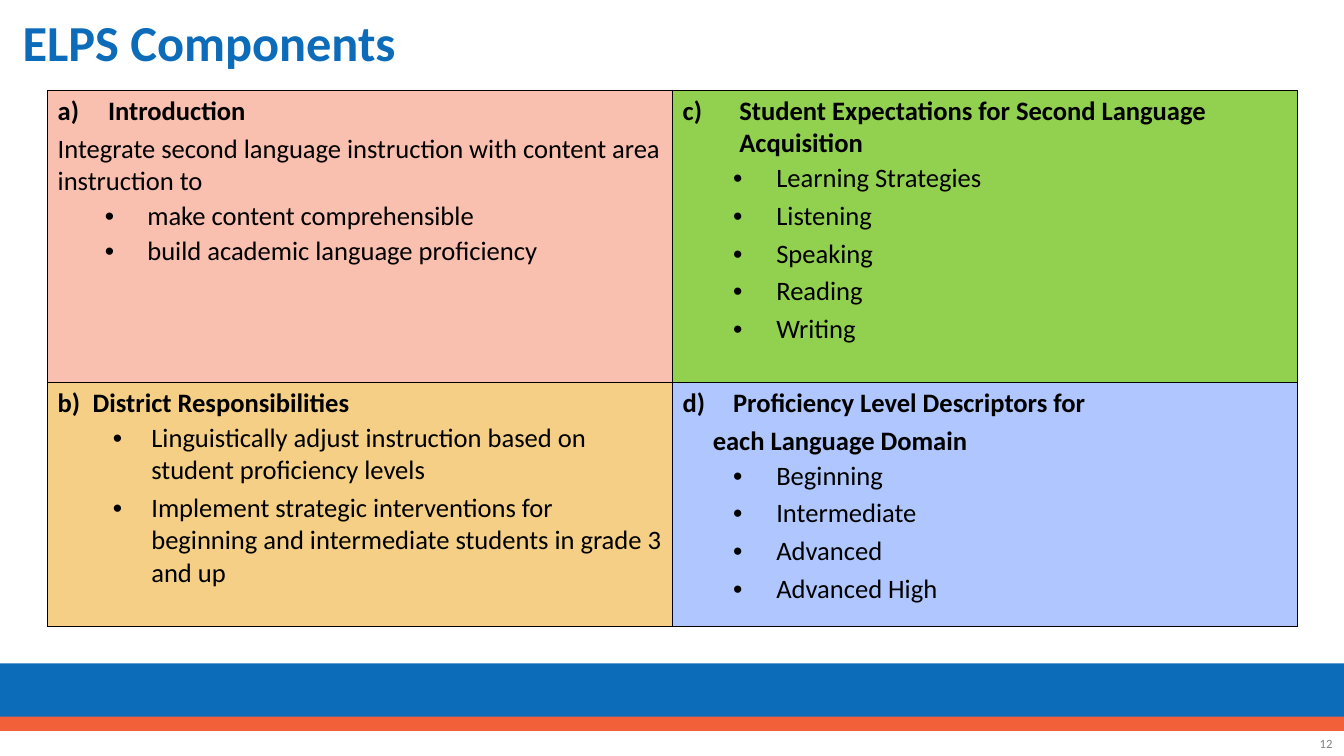
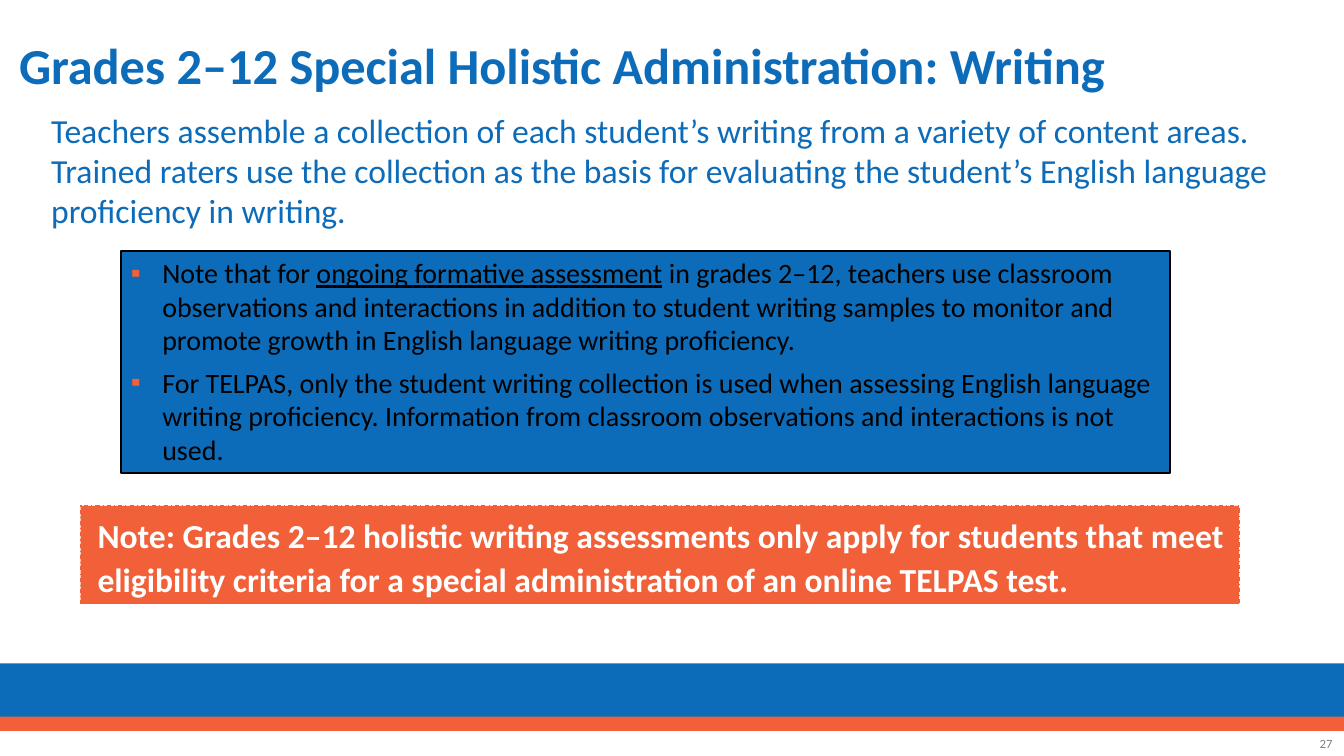
from lxml import etree
from pptx import Presentation
from pptx.dml.color import RGBColor
from pptx.enum.dml import MSO_LINE
from pptx.enum.shapes import MSO_SHAPE
from pptx.enum.text import MSO_ANCHOR, PP_ALIGN
from pptx.oxml.ns import qn
from pptx.util import Cm, Pt

RECT = MSO_SHAPE.RECTANGLE
DASH = MSO_LINE.DASH_DOT
TOP, MIDDLE = MSO_ANCHOR.TOP, MSO_ANCHOR.MIDDLE
LEFT, RIGHT = PP_ALIGN.LEFT, PP_ALIGN.RIGHT

FONT = "Calibri"
COLORS = {
    "blue": "0D6CB9", "orange": "F16038", "black": "000000",
    "white": "FFFFFF", "gray": "808080", "pink": "F9BFAF",
    "green": "92D050", "gold": "F4CF85", "sky": "AFC7FE",
}
WIDE, HIGH = 33.87, 19.05
BANDS = [("blue", 16.72, 1.46), ("orange", 18.06, 0.36)]
NUMBER = (32.5, 18.4, 1.33, 0.65)

GRID = {"left": 1.2, "top": 2.28, "cols": [15.75, 15.75], "rows": [7.36, 6.15]}
CELLS = [
    [
        ("pink", [
            ("Introduction", {"bold": True, "margin": 1.27, "hang": 1.27, "start": 1}),
            ("Integrate second language instruction with content area instruction to",
             {"before": 3.8}),
            ("make content comprehensible",
             {"margin": 2.26, "hang": 1.07, "bullet": "•", "before": 1.9}),
            ("build academic language proficiency",
             {"margin": 2.26, "hang": 1.07, "bullet": "•", "before": 1.9}),
        ]),
        ("green", [
            ("Student Expectations for Second Language Acquisition",
             {"bold": True, "margin": 1.43, "hang": 1.43, "start": 3}),
            ["Learning Strategies", "Listening", "Speaking", "Reading", "Writing"],
        ]),
    ],
    [
        ("gold", [
            ("District Responsibilities",
             {"bold": True, "margin": 0.88, "hang": 0.88, "start": 2}),
            ["Linguistically adjust instruction based on student proficiency levels",
             "Implement strategic interventions for beginning and intermediate "
             "students in grade 3 and up"],
        ]),
        ("sky", [
            ("Proficiency Level Descriptors for",
             {"bold": True, "margin": 1.27, "hang": 1.27, "start": 4}),
            ("each Language Domain", {"bold": True, "margin": 0.76, "before": 3.8}),
            ["Beginning", "Intermediate", "Advanced", "Advanced High"],
        ]),
    ],
]

INTRO = (
    "Teachers assemble a collection of each student’s writing from a variety of "
    "content areas. Trained raters use the collection as the basis for evaluating "
    "the student’s English language proficiency in writing."
)
POINTS = [
    [("Note that for ", False), ("ongoing formative assessment", True),
     (" in grades 2–12, teachers use classroom observations and interactions in "
      "addition to student writing samples to monitor and promote growth in "
      "English language writing proficiency.", False)],
    [("For TELPAS, only the student writing collection is used when assessing "
      "English language writing proficiency. Information from classroom "
      "observations and interactions is not used.", False)],
]
NOTE = (
    "Note: Grades 2–12 holistic writing assessments only apply for students that "
    "meet eligibility criteria for a special administration of an online TELPAS test."
)


def rgb(name):
    return RGBColor.from_string(COLORS[name])


def sub(node, tag, **attrs):
    return etree.SubElement(node, qn(tag), attrs)


def style(para, size, color, bold=False, align=LEFT, margin=0, hang=0,
          bullet=None, start=None, tint=None, before=0, after=0, lines=None):
    props = para._p.get_or_add_pPr()
    props.set("marL", str(Cm(margin)))
    props.set("indent", str(-Cm(hang)))
    if tint:
        sub(sub(props, "a:buClr"), "a:srgbClr", val=COLORS[tint])
    if bullet:
        sub(props, "a:buFont", typeface="Arial")
        sub(props, "a:buChar", char=bullet)
    elif start:
        sub(props, "a:buAutoNum", type="alphaLcParenR", startAt=str(start))
    else:
        sub(props, "a:buNone")
    para.alignment = align
    para.space_before, para.space_after = Pt(before), Pt(after)
    if lines:
        para.line_spacing = lines
    font = para.font
    font.name, font.size, font.bold = FONT, Pt(size), bold
    font.color.rgb = rgb(color)


def fill_text(frame, paras, anchor=TOP):
    frame.word_wrap = True
    frame.vertical_anchor = anchor
    for i, (text, look) in enumerate(paras):
        para = frame.paragraphs[0] if i == 0 else frame.add_paragraph()
        runs = [(text, False)] if isinstance(text, str) else text
        for words, under in runs:
            run = para.add_run()
            run.text = words
            if under:
                run.font.underline = True
        style(para, **look)


def add_text(slide, box, text, anchor=TOP, **look):
    shape = slide.shapes.add_textbox(*map(Cm, box))
    fill_text(shape.text_frame, [(text, look)], anchor)


def add_box(slide, box, fill, line=None, width=1, dash=None):
    shape = slide.shapes.add_shape(RECT, *map(Cm, box))
    shape.shadow.inherit = False
    shape.fill.solid()
    shape.fill.fore_color.rgb = rgb(fill)
    if line:
        shape.line.color.rgb = rgb(line)
        shape.line.width = Pt(width)
        if dash:
            shape.line.dash_style = dash
    else:
        shape.line.fill.background()
    return shape


def add_slide(deck, title, box, number):
    slide = deck.slides.add_slide(deck.slide_layouts[6])
    for color, top, high in BANDS:
        add_box(slide, (0, top, WIDE, high), color)
    add_text(slide, NUMBER, number, MIDDLE, size=9, color="gray", align=RIGHT)
    add_text(slide, box, title, MIDDLE, size=36, color="blue", bold=True, lines=0.9)
    return slide


def flatten(items):
    paras = []
    for item in items:
        if isinstance(item, list):
            margin, hang = (2.36, 0.97) if len(item) == 2 else (2.36, 1.09)
            for i, text in enumerate(item):
                paras.append((text, {"margin": margin, "hang": hang, "bullet": "•",
                                     "before": 3.8 if i else 1.9}))
        else:
            paras.append(item)
    return [(text, {"size": 19, "color": "black", **look}) for text, look in paras]


def add_grid(slide):
    cols, rows = GRID["cols"], GRID["rows"]
    area = (GRID["left"], GRID["top"], sum(cols), sum(rows))
    table = slide.shapes.add_table(len(rows), len(cols), *map(Cm, area)).table
    table.first_row = table.horz_banding = False
    for col, wide in zip(table.columns, cols):
        col.width = Cm(wide)
    for row, high, line in zip(table.rows, rows, CELLS):
        row.height = Cm(high)
        for cell, (color, items) in zip(row.cells, line):
            fill_text(cell.text_frame, flatten(items))
            props = cell._tc.get_or_add_tcPr()
            for side in ("a:lnL", "a:lnR", "a:lnT", "a:lnB"):
                edge = sub(props, side, w=str(Pt(1)))
                sub(sub(edge, "a:solidFill"), "a:srgbClr", val=COLORS["black"])
            cell.fill.solid()
            cell.fill.fore_color.rgb = rgb(color)


def main():
    deck = Presentation()
    deck.slide_width, deck.slide_height = Cm(WIDE), Cm(HIGH)

    slide = add_slide(deck, "ELPS Components", (0.32, 0, 31.5, 2.28), "12")
    add_grid(slide)

    slide = add_slide(deck, "Grades 2–12 Special Holistic Administration: Writing",
                      (0.23, 0.39, 31.5, 2.66), "27")
    add_text(slide, (1.04, 2.64, 31.47, 2.46), INTRO, size=24, color="blue")
    panel = add_box(slide, (3.05, 6.32, 26.44, 5.6), "blue", "black", 1.5)
    look = {"size": 20, "color": "black", "margin": 0.79, "hang": 0.79,
            "bullet": "▪", "tint": "orange", "after": 6}
    fill_text(panel.text_frame, [(runs, look) for runs in POINTS])
    note = add_box(slide, (2.03, 12.75, 29.2, 2.47), "orange", "orange", 0.75, DASH)
    fill_text(note.text_frame, [(NOTE, {"size": 24, "color": "white", "bold": True,
                                        "margin": 0.18, "lines": 1.1})])
    deck.save("out.pptx")


if __name__ == "__main__":
    main()
